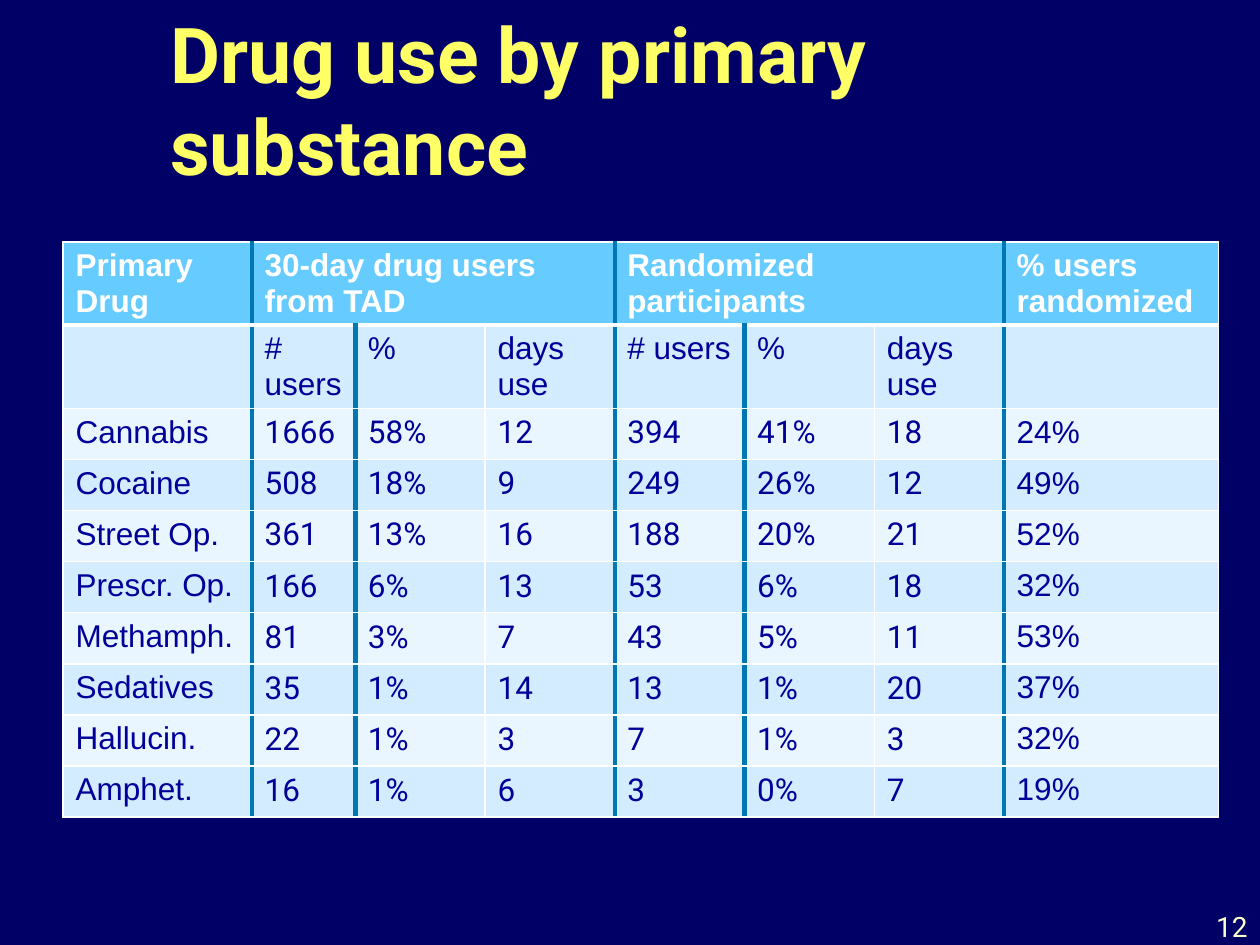
from lxml import etree
from pptx import Presentation
from pptx.dml.color import RGBColor
from pptx.enum import text
from pptx.oxml import ns
from pptx.util import Inches, Pt

TITLE = "Drug use by primary substance"
PAGE = "12"
GROUPS = [  # first column, last column, heading
    (0, 0, "Primary\nDrug"),
    (1, 3, "30-day drug users from TAD"),
    (4, 6, "Randomized participants"),
    (7, 7, "% users randomized"),
]
MEASURES = ("# users", "%", "days use")
DRUGS = [
    ("Cannabis", "1666", "58%", "12", "394", "41%", "18", "24%"),
    ("Cocaine", "508", "18%", "9", "249", "26%", "12", "49%"),
    ("Street Op.", "361", "13%", "16", "188", "20%", "21", "52%"),
    ("Prescr. Op.", "166", "6%", "13", "53", "6%", "18", "32%"),
    ("Methamph.", "81", "3%", "7", "43", "5%", "11", "53%"),
    ("Sedatives", "35", "1%", "14", "13", "1%", "20", "37%"),
    ("Hallucin.", "22", "1%", "3", "7", "1%", "3", "32%"),
    ("Amphet.", "16", "1%", "6", "3", "0%", "7", "19%"),
]
BODY = [("", *MEASURES, *MEASURES, "")] + DRUGS
COL_WIDTHS = [1.5, 0.82] + [1.03] * 5 + [1.7]
ROW_POINTS = 29.2
LAST_COL = len(COL_WIDTHS) - 1
HEAD_RULES = {0, 3, 6}  # columns with a heavy rule on their right
BODY_RULES = {0, 1, 3, 4, 6}
WHITE, RULE = "FFFFFF", "0077B2"
HEAD_FILL, BANDS = "66CCFF", ("EAF6FF", "D3ECFF")


def rgb(value):
    return RGBColor.from_string(value)


def write(tf, content, color, size, name, bold=False, align=None):
    """Fill a text frame, one paragraph per line of content."""
    tf.text = content
    for p in tf.paragraphs:
        p.alignment = align
        for r in p.runs:
            for key, value in dict(size=Pt(size), name=name, bold=bold).items():
                setattr(r.font, key, value)
            r.font.color.rgb = rgb(color)


def add_borders(cell, borders):
    """Add (side, colour, points) borders, given in the order L, R, T, B."""
    tc_pr = cell._tc.get_or_add_tcPr()
    for side, color, points in borders:
        ln = etree.SubElement(tc_pr, ns.qn("a:ln" + side), w=str(Pt(points)))
        fill = etree.SubElement(ln, ns.qn("a:solidFill"))
        etree.SubElement(fill, ns.qn("a:srgbClr"), val=color)


def format_cell(table, row, first, last, content):
    cell = table.cell(row, first)
    if last > first:
        cell.merge(table.cell(row, last))
    is_head = row == 0
    rules = HEAD_RULES if is_head else BODY_RULES
    heavy, light = (RULE, 3), (WHITE, 1)
    add_borders(cell, [
        ("L", *(heavy if first - 1 in rules else light)),
        ("R", *(heavy if last in rules else light)),
        ("T", WHITE, 3 if row == 1 else 1),
        ("B", WHITE, 3 if is_head else 1),
    ])
    cell.fill.solid()
    cell.fill.fore_color.rgb = rgb(HEAD_FILL if is_head else BANDS[row % 2])
    is_figure = row > 1 and 0 < first < LAST_COL
    write(cell.text_frame, content, WHITE if is_head else "000099", 18,
          "Roboto" if is_figure else "Arial", bold=is_head)


prs = Presentation()
prs.slide_width, prs.slide_height = Inches(10), Inches(7.5)
s = prs.slides.add_slide(prs.slide_layouts[5])
s.background.fill.solid()
s.background.fill.fore_color.rgb = rgb("000066")

title = s.shapes.title
title.left, title.top = Inches(1.25), Inches(0)
title.width, title.height = Inches(8.25), Inches(1.57)
tf = title.text_frame
tf.auto_size = text.MSO_AUTO_SIZE.NONE
tf.vertical_anchor = text.MSO_ANCHOR.MIDDLE
write(tf, TITLE, "FFFF66", 44, "Roboto", bold=True, align=text.PP_ALIGN.LEFT)

frame = s.shapes.add_table(len(BODY) + 1, len(COL_WIDTHS), Inches(0.5), Inches(1.92),
                           Inches(9.17), Inches(4.64))
table = frame.table
table.first_row = table.horz_banding = False
for column, width in zip(table.columns, COL_WIDTHS):
    column.width = Inches(width)
for row in table.rows:
    row.height = Pt(ROW_POINTS)
frame.height = Inches(4.64)

for first, last, heading in GROUPS:
    format_cell(table, 0, first, last, heading)
for row, values in enumerate(BODY, start=1):
    for col, value in enumerate(values):
        format_cell(table, row, col, col, value)

page = s.shapes.add_textbox(Inches(8.92), Inches(7.17), Inches(1.08), Inches(0.5))
page.text_frame.word_wrap = True
write(page.text_frame, PAGE, "FFFFCC", 16, "Roboto", align=text.PP_ALIGN.RIGHT)

prs.save("out.pptx")
